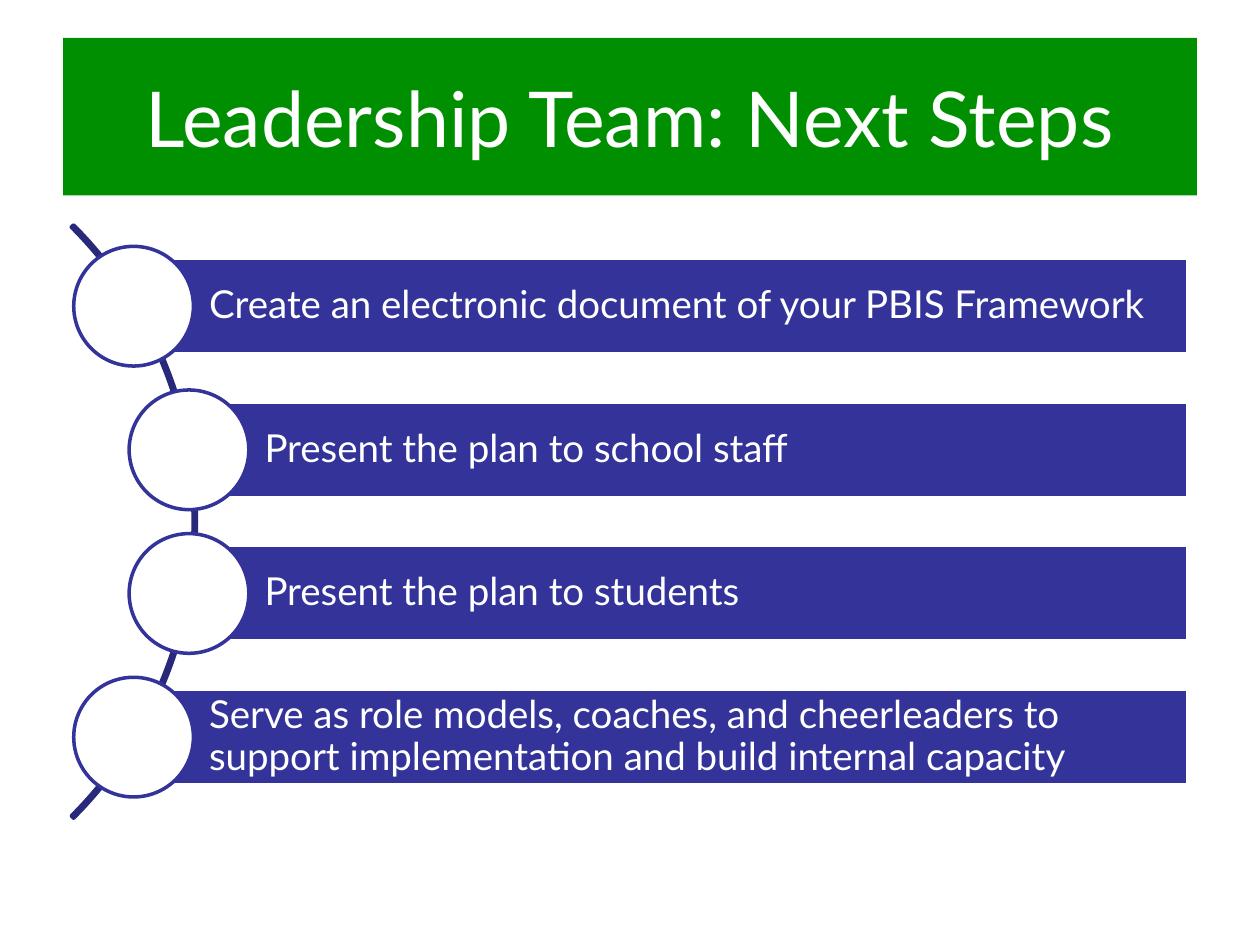
from dataclasses import dataclass

from pptx import Presentation
from pptx.dml.color import RGBColor
from pptx.enum.shapes import MSO_SHAPE as Shape
from pptx.enum.text import MSO_ANCHOR as Anchor, PP_ALIGN as Align
from pptx.util import Inches, Pt

WIDTH, HEIGHT = 10, 7.5
GREEN, BLUE, NAVY, WHITE = "008F00", "333399", "29297B", "FFFFFF"
FIRST_ROW, ROW_PITCH = 2.43, 1.14      # centre of the first step, gap to the next
COLUMNS = (1.06, 1.5)                  # circle centres at the ends and middle of the arc
BAR_RIGHT, BAR_HEIGHT, CIRCLE = 9.43, 0.76, 0.95
ARC_RADIUS, ARC_CENTRE = 3.33, (-1.77, 4.14)


@dataclass
class Step:
    text: str
    column: int


STEPS = [
    Step("Create an electronic document of your PBIS Framework", 0),
    Step("Present the plan to school staff", 1),
    Step("Present the plan to students", 1),
    Step("Serve as role models, coaches, and cheerleaders to support "
         "implementation and build internal capacity", 0),
]


def rgb(value: str) -> RGBColor:
    return RGBColor.from_string(value)


def paint(s, fill: str) -> None:
    s.fill.solid()
    s.fill.fore_color.rgb = rgb(fill)


def add_shape(slide, kind, left: float, top: float, width: float, height: float,
              line: str, fill: str | None = None):
    s = slide.shapes.add_shape(kind, *map(Inches, (left, top, width, height)))
    s.shadow.inherit = False
    if fill:
        paint(s, fill)
    else:
        s.fill.background()
    s.line.color.rgb = rgb(line)
    s.line.width = Pt(2)
    return s


def write(tf, text: str, size: float, align, **frame) -> None:
    settings = {"word_wrap": True, "vertical_anchor": Anchor.MIDDLE, **frame}
    for name, value in settings.items():
        setattr(tf, name, value)
    p = tf.paragraphs[0]
    p.alignment = align
    r = p.add_run()
    r.text = text
    for name, value in {"name": "Lato", "size": Pt(size), "bold": False}.items():
        setattr(r.font, name, value)
    r.font.color.rgb = rgb(WHITE)


def add_title(slide, text: str) -> None:
    s = slide.shapes.title
    box = {"left": 0.05 * WIDTH, "top": 0.04 * HEIGHT, "width": 0.9 * WIDTH, "height": 1.25}
    for name, value in box.items():
        setattr(s, name, Inches(value))
    paint(s, GREEN)
    write(s.text_frame, text, 44, Align.CENTER)


def add_arc(slide) -> None:
    x, y = (c - ARC_RADIUS for c in ARC_CENTRE)
    s = add_shape(slide, Shape.BLOCK_ARC, x, y, 2 * ARC_RADIUS, 2 * ARC_RADIUS, NAVY)
    for i, value in enumerate((189, 27, 0.004)):
        s.adjustments[i] = value


def add_step(slide, row: int, step: Step) -> None:
    x, y = COLUMNS[step.column], FIRST_ROW + row * ROW_PITCH
    bar = add_shape(slide, Shape.RECTANGLE, x, y - BAR_HEIGHT / 2,
                    BAR_RIGHT - x, BAR_HEIGHT, WHITE, BLUE)
    pad = Inches(0.06)
    write(bar.text_frame, step.text, 22, Align.LEFT, margin_left=Inches(0.6),
          margin_top=pad, margin_right=pad, margin_bottom=pad)
    bar.text_frame.paragraphs[0].line_spacing = 0.9
    add_shape(slide, Shape.OVAL, x - CIRCLE / 2, y - CIRCLE / 2, CIRCLE, CIRCLE, BLUE, WHITE)


def main() -> None:
    prs = Presentation()
    prs.slide_width, prs.slide_height = Inches(WIDTH), Inches(HEIGHT)
    slide = prs.slides.add_slide(prs.slide_layouts.get_by_name("Title Only"))
    add_title(slide, "Leadership Team: Next Steps")
    add_arc(slide)
    for row, step in enumerate(STEPS):
        add_step(slide, row, step)
    prs.save("out.pptx")


if __name__ == "__main__":
    main()
